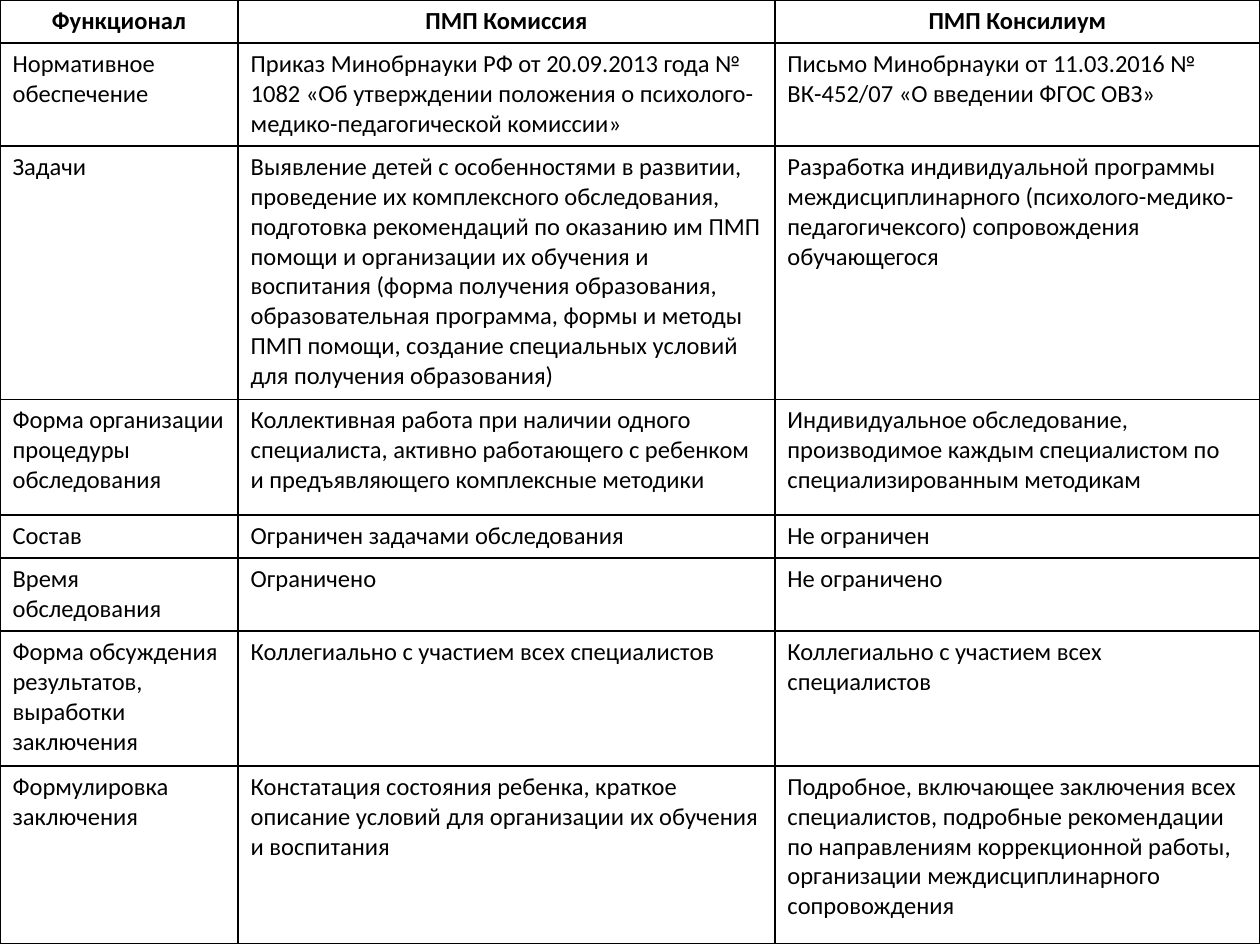
from dataclasses import dataclass

from lxml import etree
from pptx import Presentation
from pptx.dml.color import RGBColor
from pptx.enum import text
from pptx.oxml import ns
from pptx.util import Inches, Pt


@dataclass(frozen=True)
class Theme:
    font: str = "Calibri"
    size: int = 14
    ink: str = "000000"
    paper: str = "FFFFFF"
    rule: float = 1


@dataclass(frozen=True)
class Row:
    height: float
    texts: tuple[str, str, str]
    head: bool = False


THEME = Theme()
WIDTHS = (1.89, 4.26, 3.85)
ROWS = (
    Row(0.34, ("Функционал", "ПМП Комиссия", "ПМП Консилиум"), head=True),
    Row(0.82, (
        "Нормативное обеспечение",
        "Приказ Минобрнауки РФ от 20.09.2013 года № 1082 «Об утверждении "
        "положения о психолого-медико-педагогической комиссии»",
        "Письмо Минобрнауки от 11.03.2016 № ВК-452/07 «О введении ФГОС ОВЗ»",
    )),
    Row(2.01, (
        "Задачи",
        "Выявление детей с особенностями в развитии, проведение их комплексного "
        "обследования, подготовка рекомендаций по оказанию им ПМП помощи и "
        "организации их обучения и воспитания (форма получения образования, "
        "образовательная программа, формы и методы ПМП помощи, создание "
        "специальных условий для получения образования)",
        "Разработка индивидуальной программы междисциплинарного "
        "(психолого-медико-педагогичексого) сопровождения обучающегося",
    )),
    Row(0.92, (
        "Форма организации процедуры обследования",
        "Коллективная работа при наличии одного специалиста, активно "
        "работающего с ребенком и предъявляющего комплексные методики",
        "Индивидуальное обследование, производимое каждым специалистом по "
        "специализированным методикам",
    )),
    Row(0.34, ("Состав", "Ограничен задачами обследования", "Не ограничен")),
    Row(0.58, ("Время обследования", "Ограничено", "Не ограничено")),
    Row(1.07, (
        "Форма обсуждения результатов, выработки заключения",
        "Коллегиально с участием всех специалистов",
        "Коллегиально с участием всех специалистов",
    )),
    Row(1.41, (
        "Формулировка заключения",
        "Констатация состояния ребенка, краткое описание условий для "
        "организации их обучения и воспитания",
        "Подробное, включающее заключения всех специалистов, подробные "
        "рекомендации по направлениям коррекционной работы, организации "
        "междисциплинарного сопровождения",
    )),
)


def add_rules(cell) -> None:
    """Draw a line on all four sides of the cell."""
    props = cell._tc.get_or_add_tcPr()
    for spot, side in enumerate(("lnL", "lnR", "lnT", "lnB")):
        line = etree.Element(ns.qn(f"a:{side}"), w=str(Pt(THEME.rule)))
        fill = etree.SubElement(line, ns.qn("a:solidFill"))
        etree.SubElement(fill, ns.qn("a:srgbClr"), val=THEME.ink)
        props.insert(spot, line)


def fill_cell(cell, words: str, head: bool) -> None:
    cell.text = words
    cell.fill.solid()
    cell.fill.fore_color.rgb = RGBColor.from_string(THEME.paper)
    para = cell.text_frame.paragraphs[0]
    if head:
        cell.vertical_anchor = text.MSO_ANCHOR.MIDDLE
        para.alignment = text.PP_ALIGN.CENTER
    font = para.runs[0].font
    style = {"name": THEME.font, "size": Pt(THEME.size), "bold": head}
    for key, value in style.items():
        setattr(font, key, value)
    font.color.rgb = RGBColor.from_string(THEME.ink)
    add_rules(cell)


def add_grid(slide, rows: tuple[Row, ...], widths: tuple[float, ...]) -> None:
    high = sum(row.height for row in rows)
    grid = slide.shapes.add_table(
        len(rows), len(widths), 0, 0, Inches(sum(widths)), Inches(high)
    ).table
    for col, width in zip(grid.columns, widths):
        col.width = Inches(width)
    for line, row in zip(grid.rows, rows):
        line.height = Inches(row.height)
        for cell, words in zip(line.cells, row.texts):
            fill_cell(cell, words, row.head)


def main() -> None:
    deck = Presentation()
    deck.slide_width, deck.slide_height = Inches(10), Inches(7.5)
    slide = deck.slides.add_slide(deck.slide_layouts[6])
    add_grid(slide, ROWS, WIDTHS)
    deck.save("out.pptx")


if __name__ == "__main__":
    main()
